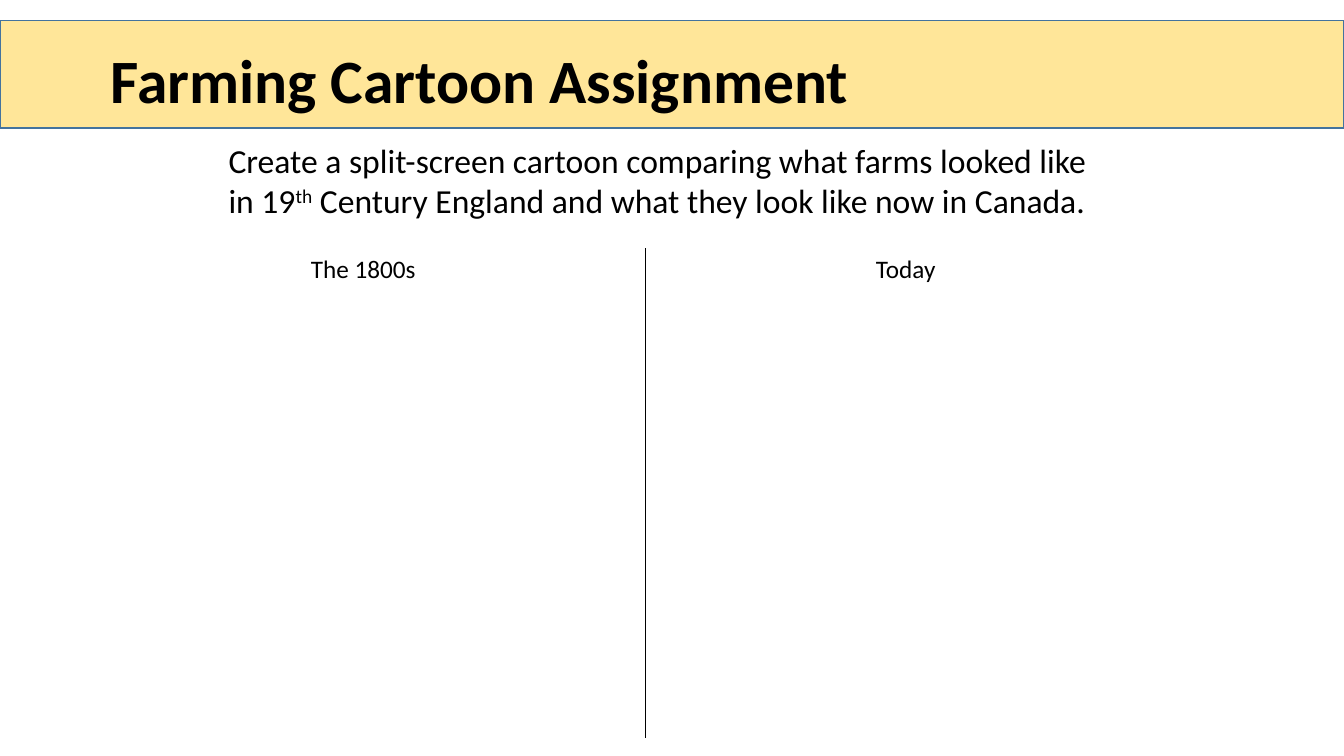
from dataclasses import dataclass

from lxml import etree
from pptx import Presentation
from pptx.dml.color import RGBColor
from pptx.enum.shapes import MSO_CONNECTOR, MSO_SHAPE
from pptx.enum.text import MSO_ANCHOR, PP_ALIGN
from pptx.oxml.ns import qn
from pptx.util import Cm, Pt

RECTANGLE = MSO_SHAPE.RECTANGLE
STRAIGHT = MSO_CONNECTOR.STRAIGHT
LEFT, CENTER = PP_ALIGN.LEFT, PP_ALIGN.CENTER
TOP, MIDDLE = MSO_ANCHOR.TOP, MSO_ANCHOR.MIDDLE
BLANK_LAYOUT = 6


@dataclass(frozen=True)
class Theme:
    font: str = "Calibri"
    ink: RGBColor = RGBColor(0x00, 0x00, 0x00)
    banner_fill: RGBColor = RGBColor(0xFF, 0xE6, 0x99)
    banner_line: RGBColor = RGBColor(0x43, 0x73, 0x9E)
    title_size: Pt = Pt(44)
    body_size: Pt = Pt(24)
    label_size: Pt = Pt(18)


THEME = Theme()


def add_divider(slide, x, top, bottom):
    divider = slide.shapes.add_connector(STRAIGHT, Cm(x), Cm(top), Cm(x), Cm(bottom))
    divider.line.color.rgb = THEME.ink
    divider.line.width = Pt(0.5)
    etree.SubElement(divider._element.spPr, qn("a:effectLst"))


def add_banner(slide, top, width, height):
    banner = slide.shapes.add_shape(RECTANGLE, 0, Cm(top), width, Cm(height))
    banner.shadow.inherit = False
    banner.fill.solid()
    banner.fill.fore_color.rgb = THEME.banner_fill
    banner.line.color.rgb = THEME.banner_line
    banner.line.width = Pt(1)


def add_text(slide, box, runs, size, align=LEFT, anchor=TOP, bold=False):
    """Add one paragraph; runs are (text, baseline percent) pairs."""
    text_frame = slide.shapes.add_textbox(*map(Cm, box)).text_frame
    text_frame.word_wrap = True
    text_frame.vertical_anchor = anchor
    paragraph = text_frame.paragraphs[0]
    paragraph.alignment = align
    for text, baseline in runs:
        run = paragraph.add_run()
        run.text = text
        run.font.name = THEME.font
        run.font.size = size
        run.font.bold = bold
        run.font.color.rgb = THEME.ink
        if baseline:
            run.font._element.set("baseline", str(baseline * 1000))
    return paragraph


def main():
    presentation = Presentation()
    presentation.slide_width = Cm(33.87)
    presentation.slide_height = Cm(19.05)
    slide = presentation.slides.add_slide(presentation.slide_layouts[BLANK_LAYOUT])

    add_divider(slide, 16.26, 6.25, 18.6)
    for left, label in ((4.06, "The 1800s"), (17.73, "Today")):
        add_text(slide, (left, 6.25, 10.19, 1.02), [(label, 0)],
                 THEME.label_size, align=CENTER)

    add_banner(slide, 0.51, presentation.slide_width, 2.72)
    title = add_text(slide, (2.54, 0.51, 22.86, 3.18),
                     [("Farming Cartoon Assignment", 0)],
                     THEME.title_size, anchor=MIDDLE, bold=True)
    title.line_spacing = 0.9

    instructions = [
        ("Create a split-screen cartoon comparing what farms looked like in 19", 0),
        ("th", 30),
        (" Century England and what they look like now in Canada.", 0),
    ]
    add_text(slide, (5.51, 3.4, 22.43, 2.31), instructions, THEME.body_size)

    presentation.save("out.pptx")


if __name__ == "__main__":
    main()
